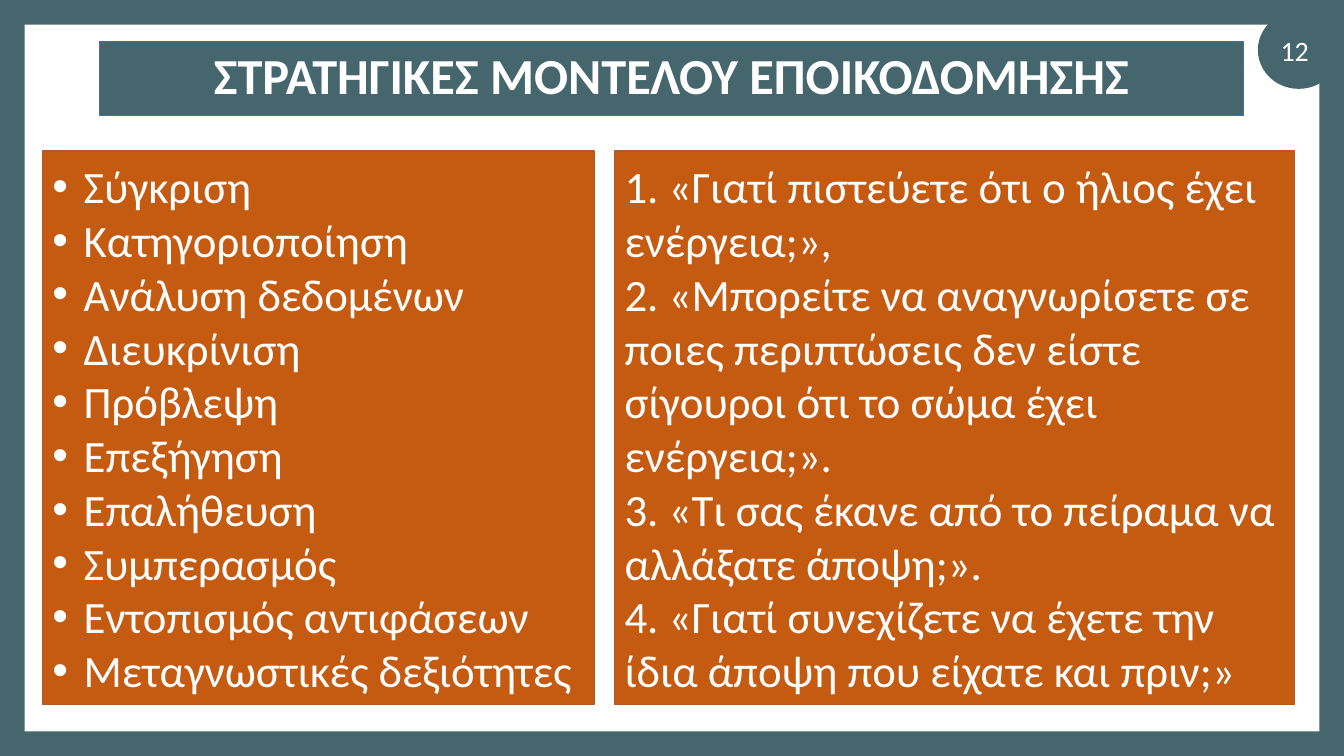
"""Build the slide on strategies of the constructivist teaching model."""
from dataclasses import dataclass

from lxml.etree import SubElement
from pptx import Presentation
from pptx.dml.color import RGBColor as RGB
from pptx.enum.shapes import MSO_SHAPE as Kind
from pptx.enum.text import MSO_ANCHOR as Anchor, PP_ALIGN as Align
from pptx.oxml.ns import qn
from pptx.util import Cm, Pt


@dataclass(frozen=True)
class Theme:
    teal: RGB = RGB(0x46, 0x66, 0x6D)
    rust: RGB = RGB(0xC5, 0x5A, 0x11)
    edge: RGB = RGB(0xAF, 0x5C, 0x24)
    blue: RGB = RGB(0x43, 0x73, 0x9E)
    white: RGB = RGB(0xFF, 0xFF, 0xFF)
    font: str = "Calibri"
    head: Pt = Pt(36)
    body: Pt = Pt(32)
    page: Pt = Pt(20)


theme = Theme()


def draw(kind, area, fill, line=None):
    shape = slide.shapes.add_shape(kind, *map(Cm, area))
    shape.shadow.inherit = False
    shape.fill.solid()
    shape.fill.fore_color.rgb = fill
    if line is None:
        shape.line.fill.background()
    else:
        shape.line.color.rgb = line
        shape.line.width = Pt(1)
    return shape


def write(shape, text, size, align=Align.LEFT, bold=False, bullet=False, space=1.0):
    frame = shape.text_frame
    frame.word_wrap = True
    frame.vertical_anchor = Anchor.MIDDLE
    for i, line in enumerate(text.split("\n")):
        para = frame.paragraphs[0] if i == 0 else frame.add_paragraph()
        para.alignment = align
        para.line_spacing = space
        if bullet:
            props = para._p.get_or_add_pPr()
            props.set("marL", str(Cm(0.79)))
            props.set("indent", str(-Cm(0.79)))
            SubElement(props, qn("a:buFont"), typeface="Arial")
            SubElement(props, qn("a:buChar"), char="•")
        run = para.add_run()
        run.text = line
        run.font.name = theme.font
        run.font.size = size
        run.font.bold = bold
        run.font.color.rgb = theme.white


deck = Presentation()
wide, high, rim = 33.87, 19.05, 0.62
deck.slide_width, deck.slide_height = Cm(wide), Cm(high)
slide = deck.slides.add_slide(deck.slide_layouts[6])

draw(Kind.OVAL, (31.7, 0.28, 2.06, 1.96), theme.teal)
for area in (
    (0, 0, wide, rim),
    (0, high - rim, wide, rim),
    (0, 0, rim, high),
    (wide - rim, 0, rim, high),
):
    draw(Kind.RECTANGLE, area, theme.teal)

page = slide.shapes.add_textbox(Cm(31.6), Cm(0.76), Cm(2.06), Cm(1.02))
write(page, "12", theme.page, align=Align.CENTER)

skills = """Σύγκριση
Κατηγοριοποίηση
Ανάλυση δεδομένων
Διευκρίνιση
Πρόβλεψη
Επεξήγηση
Επαλήθευση
Συμπερασμός
Εντοπισμός αντιφάσεων
Μεταγνωστικές δεξιότητες"""

asks = """1. «Γιατί πιστεύετε ότι ο ήλιος έχει ενέργεια;»,
2. «Μπορείτε να αναγνωρίσετε σε ποιες περιπτώσεις δεν είστε σίγουροι ότι το σώμα έχει ενέργεια;».
3. «Τι σας έκανε από το πείραμα να αλλάξατε άποψη;».
4. «Γιατί συνεχίζετε να έχετε την ίδια άποψη που είχατε και πριν;»"""

for left, width, text, bullet in (
    (1.07, 13.9, skills, True),
    (15.49, 17.13, asks, False),
):
    panel = draw(Kind.RECTANGLE, (left, 3.81, width, 13.94), theme.rust, theme.edge)
    write(panel, text, theme.body, bullet=bullet)

title = draw(Kind.RECTANGLE, (2.51, 1.04, 28.83, 1.88), theme.teal, theme.blue)
write(title, "ΣΤΡΑΤΗΓΙΚΕΣ ΜΟΝΤΕΛΟΥ ΕΠΟΙΚΟΔΟΜΗΣΗΣ", theme.head,
      align=Align.CENTER, bold=True, space=0.9)

deck.save("out.pptx")
